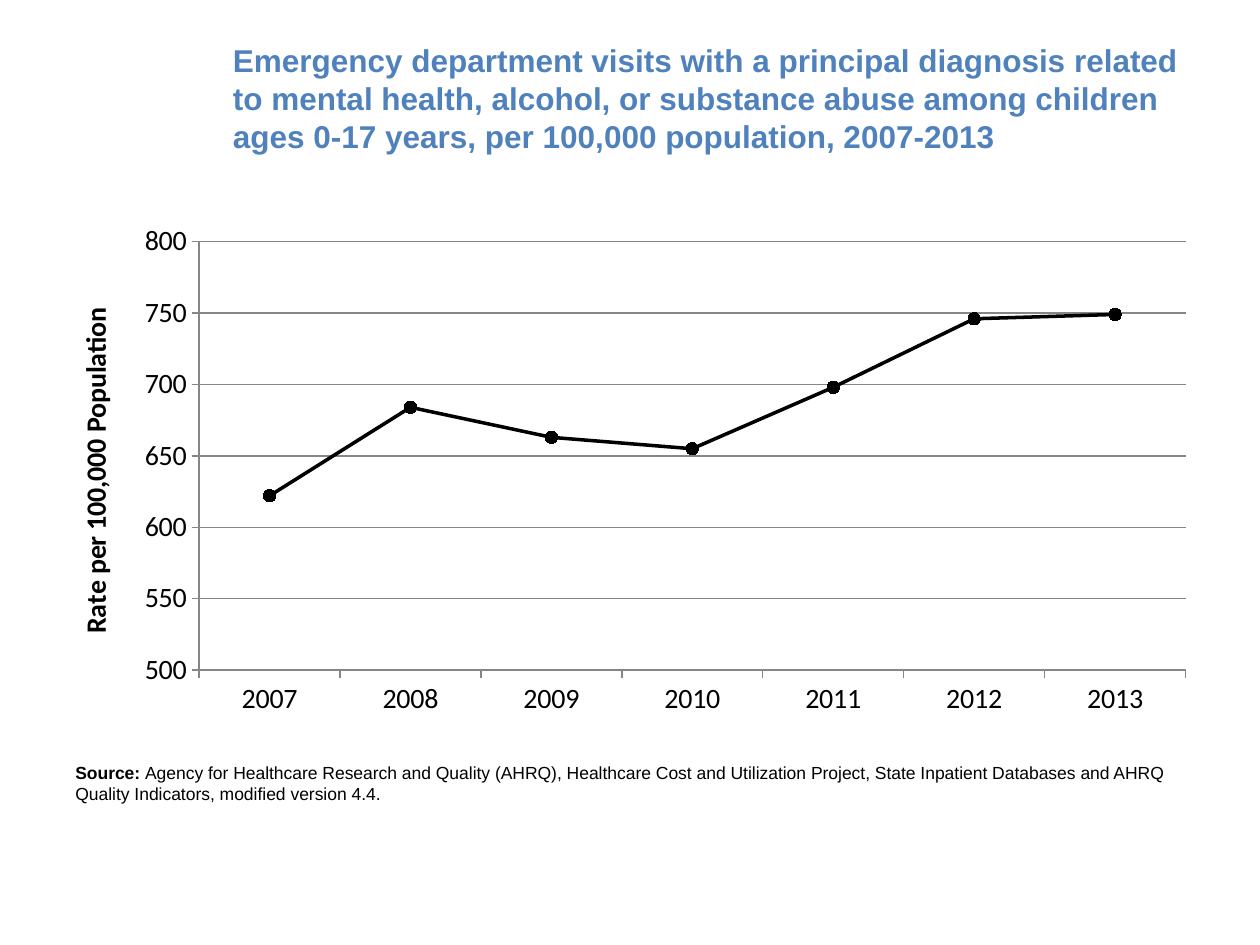
from dataclasses import dataclass

import pptx
import pptx.chart.data
import pptx.dml.color
import pptx.enum.chart
import pptx.enum.text
import pptx.oxml
import pptx.util
from pptx.util import Pt

BLUE = pptx.dml.color.RGBColor(0x4F, 0x81, 0xBD)
BLACK = pptx.dml.color.RGBColor(0, 0, 0)
GREY = pptx.dml.color.RGBColor(0x86, 0x86, 0x86)

YEARS = [str(year) for year in range(2007, 2014)]
RATES = (622, 684, 663, 655, 698, 746, 749)
PLOT_AREA = {"x": 0.12, "y": 0.074, "w": 0.87, "h": 0.791}
AXIS_FONT = {"name": "Calibri", "size": Pt(16), "bold": False}


@dataclass
class Box:
    left: float
    top: float
    width: float
    height: float

    def lengths(self) -> tuple:
        return tuple(Pt(v) for v in (self.left, self.top, self.width, self.height))


@dataclass
class Run:
    text: str
    size: float
    bold: bool
    color: pptx.dml.color.RGBColor


@dataclass
class TextBlock:
    box: Box
    anchor: pptx.enum.text.MSO_ANCHOR
    runs: list[Run]


TEXT_BLOCKS = [
    TextBlock(
        Box(126, 21.6, 558, 68.4),
        pptx.enum.text.MSO_ANCHOR.MIDDLE,
        [Run("Emergency department visits with a principal diagnosis related to mental "
             "health, alcohol, or substance abuse among children ages 0-17 years, "
             "per 100,000 population, 2007-2013", 18, True, BLUE)],
    ),
    TextBlock(
        Box(36, 432, 648, 31.68),
        pptx.enum.text.MSO_ANCHOR.TOP,
        [Run("Source: ", 10, True, BLACK),
         Run("Agency for Healthcare Research and Quality (AHRQ), Healthcare Cost and "
             "Utilization Project, State Inpatient Databases and AHRQ Quality "
             "Indicators, modified version 4.4.", 10, False, BLACK)],
    ),
]
CHART_BOX = Box(36, 115.2, 648, 309.6)


def set_attributes(target, values: dict) -> None:
    for name, value in values.items():
        setattr(target, name, value)


def add_text(s, block: TextBlock) -> None:
    tf = s.shapes.add_textbox(*block.box.lengths()).text_frame
    set_attributes(tf, {"word_wrap": True, "vertical_anchor": block.anchor})
    p = tf.paragraphs[0]
    for run in block.runs:
        r = p.add_run()
        r.text = run.text
        set_attributes(r.font, {"name": "Arial", "size": Pt(run.size), "bold": run.bold})
        r.font.color.rgb = run.color


def fix_plot_area(chart) -> None:
    """Place the inner plot area at set fractions of the chart."""
    plot_area = chart._chartSpace.chart.plotArea
    for old in plot_area.findall(pptx.oxml.ns.qn("c:layout")):
        plot_area.remove(old)
    modes = "".join(f'<c:{key}Mode val="edge"/>' for key in "xy")
    sizes = "".join(f'<c:{key} val="{value}"/>' for key, value in PLOT_AREA.items())
    plot_area.insert(0, pptx.oxml.parse_xml(
        f'<c:layout {pptx.oxml.ns.nsdecls("c")}><c:manualLayout>'
        f'<c:layoutTarget val="inner"/>{modes}{sizes}</c:manualLayout></c:layout>'))


def style_axis(axis) -> None:
    axis.major_tick_mark = pptx.enum.chart.XL_TICK_MARK.OUTSIDE
    set_attributes(axis.tick_labels.font, AXIS_FONT)
    axis.tick_labels.font.color.rgb = BLACK
    axis.format.line.color.rgb = GREY
    axis.format.line.width = Pt(0.75)


def add_rate_chart(s) -> None:
    data = pptx.chart.data.CategoryChartData(number_format="#,##0")
    data.categories = YEARS
    data.add_series("Series 1", RATES)
    chart = s.shapes.add_chart(
        pptx.enum.chart.XL_CHART_TYPE.LINE_MARKERS, *CHART_BOX.lengths(), data).chart
    set_attributes(chart, {"has_legend": False, "has_title": False})
    set_attributes(chart.font, {"name": "Arial", "size": Pt(10)})
    chart.font.color.rgb = BLACK
    fix_plot_area(chart)

    rates = chart.value_axis
    for axis in (chart.category_axis, rates):
        style_axis(axis)
    set_attributes(rates, {"minimum_scale": 500, "maximum_scale": 800, "major_unit": 50,
                           "has_major_gridlines": True})
    set_attributes(rates.tick_labels, {"number_format": "#,##0",
                                       "number_format_is_linked": False})
    rates.major_gridlines.format.line.color.rgb = GREY
    rates.major_gridlines.format.line.width = Pt(0.75)
    r = rates.axis_title.text_frame.paragraphs[0].add_run()
    r.text = "Rate per 100,000 Population"
    set_attributes(r.font, AXIS_FONT | {"bold": True})
    r.font.color.rgb = BLACK

    chart.plots[0].vary_by_categories = False
    series = chart.plots[0].series[0]
    series.smooth = False
    series.format.line.color.rgb = BLACK
    series.format.line.width = Pt(2)
    marker = series.marker
    set_attributes(marker, {"style": pptx.enum.chart.XL_MARKER_STYLE.CIRCLE, "size": 7})
    marker.format.fill.solid()
    marker.format.fill.fore_color.rgb = BLACK
    marker.format.line.color.rgb = BLACK


def main() -> None:
    prs = pptx.Presentation()
    set_attributes(prs, {"slide_width": Pt(720), "slide_height": Pt(540)})
    s = prs.slides.add_slide(prs.slide_layouts[6])
    add_rate_chart(s)
    for block in TEXT_BLOCKS:
        add_text(s, block)
    prs.save("out.pptx")


if __name__ == "__main__":
    main()
